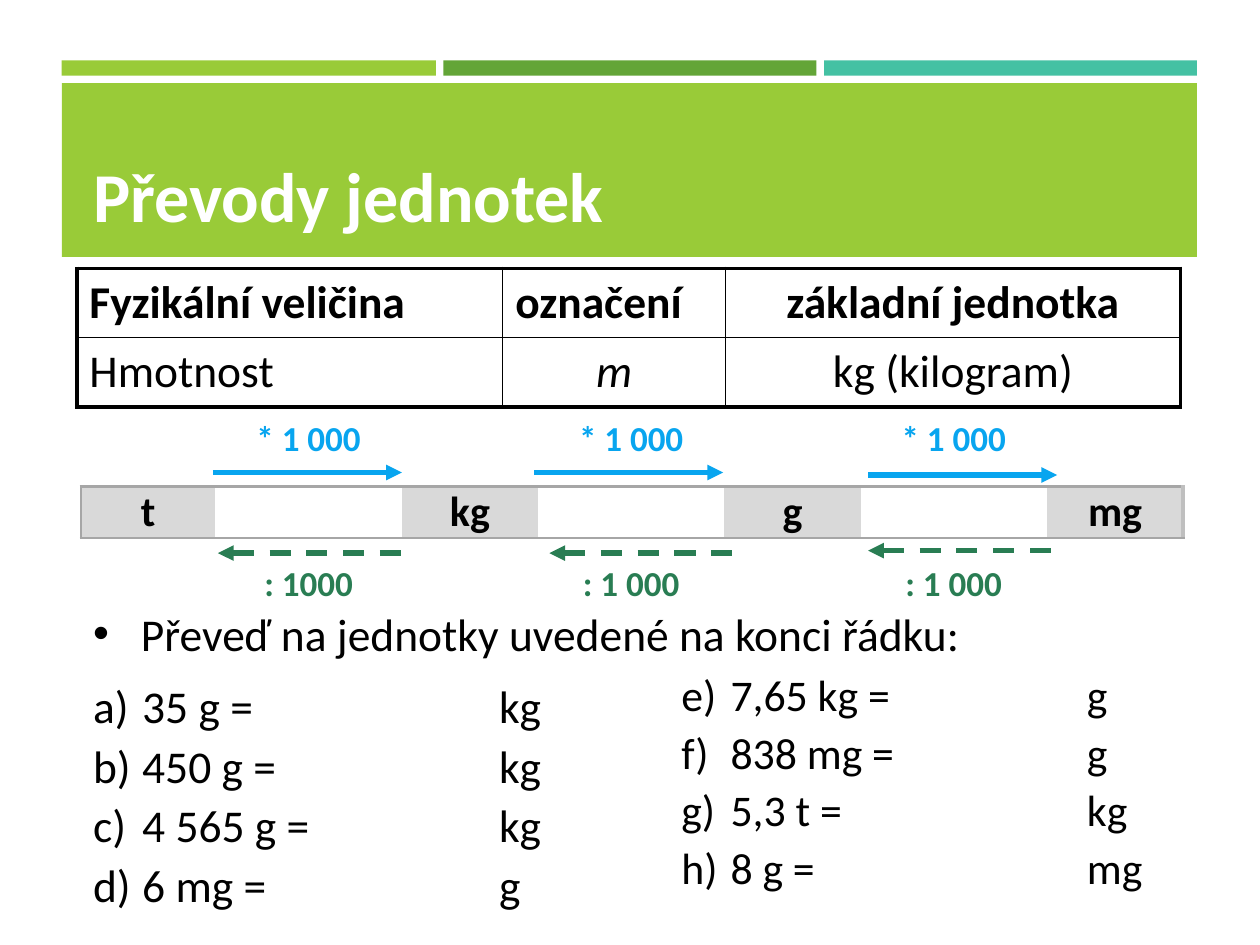
from lxml.etree import SubElement
from pptx import Presentation
from pptx.dml.color import RGBColor
from pptx.enum.dml import MSO_LINE
from pptx.enum.shapes import MSO_CONNECTOR, MSO_SHAPE
from pptx.enum.text import MSO_ANCHOR, PP_ALIGN
from pptx.oxml.ns import qn
from pptx.util import Inches, Pt

FONT = "Calibri"
COLORS = {
    "lime": "99CB38", "green": "63A537", "teal": "44C1A3",
    "white": "FFFFFF", "black": "000000", "blue": "08A5EF",
    "dark_green": "297D53", "unit_fill": "D9D9D9",
    "unit_border": "A6A6A6", "right_border": "BFBFBF",
}
NO_TABLE_STYLE = "{2D5ABB26-0587-4C30-8999-92F81FD0307C}"

TITLE = "Převody jednotek"
BARS = [  # left, top, width, height, colour
    (0.49, 0.48, 2.97, 0.12, "lime"),
    (3.52, 0.48, 2.96, 0.12, "green"),
    (6.54, 0.48, 2.96, 0.12, "teal"),
    (0.49, 0.66, 9.01, 1.38, "lime"),
]
QUANTITY = [
    ["Fyzikální veličina", "označení", "základní jednotka"],
    ["Hmotnost", "m", "kg (kilogram)"],
]
UNITS = ["t", "kg", "g", "mg"]
MULTIPLY = ["* 1 000", "* 1 000", "* 1 000"]
DIVIDE = [": 1000", ": 1 000", ": 1 000"]
MULTIPLY_ARROWS = [(1.69, 3.75), (4.24, 3.75), (6.89, 3.77)]
DIVIDE_ARROWS = [(1.73, 4.39), (4.36, 4.39), (6.89, 4.37)]
ARROW_LENGTH = 1.5
TASK = "Převeď na jednotky uvedené na konci řádku:"
EXERCISES = [  # box, text size, first number, (quantity, target unit)
    ((0.64, 5.33, 4.05, 2.01), 26, 1,
     [("35 g", "kg"), ("450 g", "kg"), ("4 565 g", "kg"), ("6 mg", "g")]),
    ((5.31, 5.25, 4.06, 2.02), 25, 5,
     [("7,65 kg", "g"), ("838 mg", "g"), ("5,3 t", "kg"), ("8 g", "mg")]),
]
UNIT_TAB = 3.14


def rgb(color):
    return RGBColor.from_string(COLORS[color])


def add_run(paragraph, text, size, color="black", bold=False, italic=False):
    run = paragraph.add_run()
    run.text = text
    font = run.font
    font.name, font.size, font.bold, font.italic = FONT, Pt(size), bold, italic
    font.color.rgb = rgb(color)


def add_plain_table(slide, left, top, widths, heights):
    """Add a table without style, banding or cell fills."""
    table = slide.shapes.add_table(
        len(heights), len(widths), Inches(left), Inches(top),
        Inches(sum(widths)), Inches(sum(heights))).table
    table.first_row = table.horz_banding = False
    table._tbl.tblPr.find(qn("a:tableStyleId")).text = NO_TABLE_STYLE
    for column, width in zip(table.columns, widths):
        column.width = Inches(width)
    for row, height in zip(table.rows, heights):
        row.height = Inches(height)
    for cell in table.iter_cells():
        cell.fill.background()
    return table


def set_borders(cell, borders):
    """Draw borders given as {side: (colour, points)}, ahead of the fill."""
    properties = cell._tc.get_or_add_tcPr()
    sides = [side for side in "LRTB" if side in borders]
    for position, side in enumerate(sides):
        color, points = borders[side]
        line = SubElement(properties, qn(f"a:ln{side}"), w=str(Pt(points)))
        SubElement(SubElement(line, qn("a:solidFill")), qn("a:srgbClr"), val=COLORS[color])
        properties.insert(position, line)


def add_arrow(slide, left, top, color, end, dashed=False):
    arrow = slide.shapes.add_connector(
        MSO_CONNECTOR.STRAIGHT, Inches(left), Inches(top),
        Inches(left + ARROW_LENGTH), Inches(top))
    arrow.line.color.rgb = rgb(color)
    arrow.line.width = Pt(3)
    if dashed:
        arrow.line.dash_style = MSO_LINE.DASH
    SubElement(arrow.line._get_or_add_ln(), qn(f"a:{end}"), type="triangle")
    SubElement(arrow._element.spPr, qn("a:effectLst"))


def add_text_frame(slide, box):
    frame = slide.shapes.add_textbox(*map(Inches, box)).text_frame
    frame.word_wrap = True
    return frame


def hang(paragraph, indent):
    properties = paragraph._p.get_or_add_pPr()
    properties.set("marL", str(Inches(indent)))
    properties.set("indent", str(-Inches(indent)))
    return properties


def add_header(slide):
    title = slide.shapes.title
    title.left, title.top, title.width, title.height = map(Inches, (0.64, 0.75, 8.74, 1.18))
    title.text_frame.vertical_anchor = MSO_ANCHOR.BOTTOM
    paragraph = title.text_frame.paragraphs[0]
    paragraph.alignment = PP_ALIGN.LEFT
    add_run(paragraph, TITLE, 40, "white", bold=True)
    for *box, color in BARS:
        bar = slide.shapes.add_shape(MSO_SHAPE.RECTANGLE, *map(Inches, box))
        bar.shadow.inherit = False
        bar.fill.solid()
        bar.fill.fore_color.rgb = rgb(color)
        bar.line.fill.background()
        title._element.addprevious(bar._element)


def add_quantity_table(slide):
    table = add_plain_table(slide, 0.61, 2.13, [3.38, 1.77, 3.61], [0.55, 0.55])
    for row, texts in enumerate(QUANTITY):
        for column, text in enumerate(texts):
            cell = table.cell(row, column)
            paragraph = cell.text_frame.paragraphs[0]
            if column == 2 or text == "m":
                paragraph.alignment = PP_ALIGN.CENTER
            add_run(paragraph, text, 26, bold=row == 0, italic=text == "m")
            outer = {"L": column == 0, "R": column == 2, "T": row == 0, "B": row == 1}
            set_borders(cell, {side: ("black", 2.25 if edge else 1)
                               for side, edge in outer.items()})


def add_unit_table(slide):
    widths = [1.07] + [1.48, 1.08] * 3
    table = add_plain_table(slide, 0.64, 3.32, widths, [0.33, 0.2, 0.4, 0.2, 0.31])
    texts = {}
    for row, first, labels, size, color in (
            (0, 1, MULTIPLY, 20, "blue"), (2, 0, UNITS, 24, "black"),
            (4, 1, DIVIDE, 20, "dark_green")):
        for step, label in enumerate(labels):
            texts[row, first + 2 * step] = label, size, color
    for row in range(len(table.rows)):
        for column in range(len(widths)):
            cell = table.cell(row, column)
            cell.margin_left = cell.margin_right = Inches(0.07)
            cell.margin_top = cell.margin_bottom = 0
            paragraph = cell.text_frame.paragraphs[0]
            paragraph.alignment = PP_ALIGN.CENTER
            if (row, column) in texts:
                add_run(paragraph, *texts[row, column], bold=True)
            else:
                SubElement(paragraph._p, qn("a:endParaRPr"), sz="800")
            if row == 2:
                borders = dict.fromkeys("TB", ("unit_border", 1.5))
                if column == 0:
                    borders["L"] = ("unit_border", 1.5)
                elif column == len(widths) - 1:
                    borders["R"] = ("right_border", 2.25)
                if column % 2 == 0:
                    cell.fill.solid()
                    cell.fill.fore_color.rgb = rgb("unit_fill")
                set_borders(cell, borders)


def add_exercises(slide):
    task = add_text_frame(slide, (0.64, 4.76, 8.74, 0.5)).paragraphs[0]
    properties = hang(task, 0.38)
    SubElement(properties, qn("a:buFont"), typeface="Arial")
    SubElement(properties, qn("a:buChar"), char="•")
    add_run(task, TASK, 26)
    for box, size, start, exercises in EXERCISES:
        frame = add_text_frame(slide, box)
        for number, (quantity, unit) in enumerate(exercises):
            paragraph = frame.add_paragraph() if number else frame.paragraphs[0]
            paragraph.space_after = Pt(3)
            properties = hang(paragraph, 0.39)
            SubElement(properties, qn("a:buFont"), typeface=FONT)
            SubElement(properties, qn("a:buAutoNum"), type="alphaLcParenR", startAt=str(start))
            tabs = SubElement(properties, qn("a:tabLst"))
            SubElement(tabs, qn("a:tab"), pos=str(Inches(UNIT_TAB)), algn="l")
            add_run(paragraph, f"{quantity} = \t {unit}", size)


def main():
    deck = Presentation()
    deck.slide_width, deck.slide_height = Inches(10), Inches(7.5)
    slide = deck.slides.add_slide(deck.slide_layouts[5])
    add_header(slide)
    add_quantity_table(slide)
    add_unit_table(slide)
    for left, top in MULTIPLY_ARROWS:
        add_arrow(slide, left, top, "blue", "tailEnd")
    for left, top in DIVIDE_ARROWS:
        add_arrow(slide, left, top, "dark_green", "headEnd", dashed=True)
    add_exercises(slide)
    deck.save("out.pptx")


if __name__ == "__main__":
    main()
